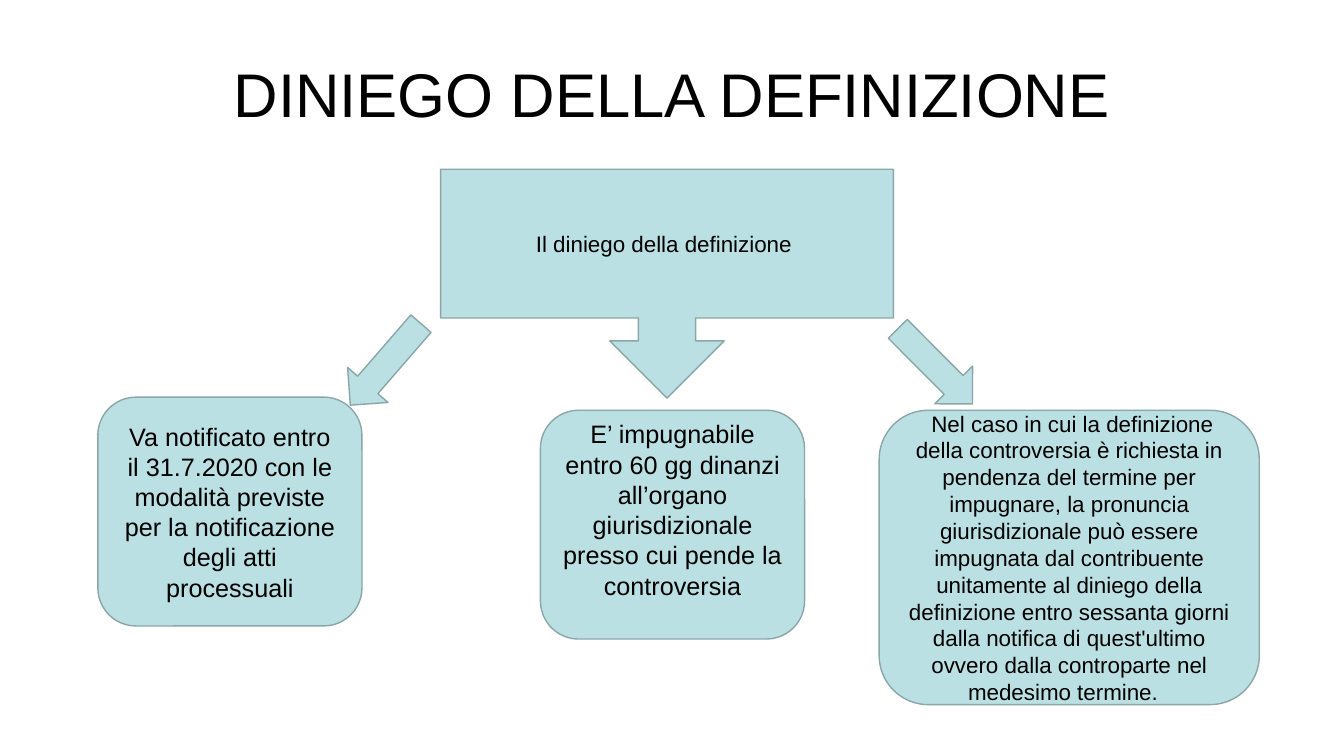
from pptx import Presentation
from pptx.dml.color import RGBColor
from pptx.enum.shapes import MSO_SHAPE
from pptx.enum.text import MSO_ANCHOR, PP_ALIGN
from pptx.util import Inches, Pt

BLACK = RGBColor(0x00, 0x00, 0x00)
PALE_TEAL = RGBColor(0xBB, 0xE0, 0xE3)
TEAL_GREY = RGBColor(0x8A, 0xA6, 0xA8)
FONT = "Arial"

NOTIFICATION = [
    "Va notificato entro",
    "il 31.7.2020 con le",
    "modalità previste",
    "per la notificazione",
    "degli atti processuali",
]
APPEAL = [
    "E’ impugnabile entro 60 gg dinanzi all’organo giurisdizionale "
    "presso cui pende la controversia"
]
PENDING_TERM = [
    " Nel caso in cui la definizione della controversia è richiesta in pendenza "
    "del termine per impugnare, la pronuncia giurisdizionale può essere impugnata "
    "dal contribuente unitamente al diniego della definizione entro sessanta giorni "
    "dalla notifica di quest'ultimo ovvero dalla controparte nel medesimo termine.  "
]


def write_centred(frame, lines, size):
    frame.word_wrap = True
    frame.vertical_anchor = MSO_ANCHOR.MIDDLE
    for index, line in enumerate(lines):
        paragraph = frame.paragraphs[0] if index == 0 else frame.add_paragraph()
        paragraph.alignment = PP_ALIGN.CENTER
        run = paragraph.add_run()
        run.text = line
        run.font.name = FONT
        run.font.size = Pt(size)
        run.font.color.rgb = BLACK


def add_teal_shape(slide, kind, box, rotation=0):
    """Add a preset shape in the slide's style; box is left, top, width, height in inches."""
    shape = slide.shapes.add_shape(kind, *map(Inches, box))
    shape.shadow.inherit = False
    shape.fill.solid()
    shape.fill.fore_color.rgb = PALE_TEAL
    shape.line.color.rgb = TEAL_GREY
    shape.line.width = Pt(1)
    shape.rotation = rotation
    return shape


def add_title(slide, box):
    title = slide.shapes.title
    title.left, title.top, title.width, title.height = map(Inches, box)
    write_centred(title.text_frame, ["DINIEGO DELLA DEFINIZIONE"], 44)


def add_denial_callout(slide, box):
    callout = add_teal_shape(slide, MSO_SHAPE.DOWN_ARROW_CALLOUT, box)
    write_centred(callout.text_frame, ["Il diniego della definizione "], 16)


def add_consequence(slide, box, lines, size, bottom_inset=0.05):
    consequence = add_teal_shape(slide, MSO_SHAPE.ROUNDED_RECTANGLE, box)
    consequence.text_frame.margin_bottom = Inches(bottom_inset)
    write_centred(consequence.text_frame, lines, size)


def main():
    presentation = Presentation()
    presentation.slide_width = Inches(13.33)
    presentation.slide_height = Inches(7.5)
    slide = presentation.slides.add_slide(presentation.slide_layouts[5])

    add_title(slide, (0.67, 0.3, 12, 1.25))
    add_denial_callout(slide, (4.37, 1.68, 4.49, 2.27))
    add_consequence(slide, (0.97, 3.94, 2.62, 2.27), NOTIFICATION, 18)
    add_consequence(slide, (5.36, 4.07, 2.62, 2.27), APPEAL, 18, bottom_inset=0.35)
    add_consequence(slide, (8.72, 4.07, 3.77, 2.92), PENDING_TERM, 16)
    add_teal_shape(slide, MSO_SHAPE.RIGHT_ARROW, (8.75, 3.37, 1.05, 0.53), 45.1)
    add_teal_shape(slide, MSO_SHAPE.LEFT_ARROW, (3.29, 3.35, 1.07, 0.53), 310.9)

    presentation.save("out.pptx")


if __name__ == "__main__":
    main()
